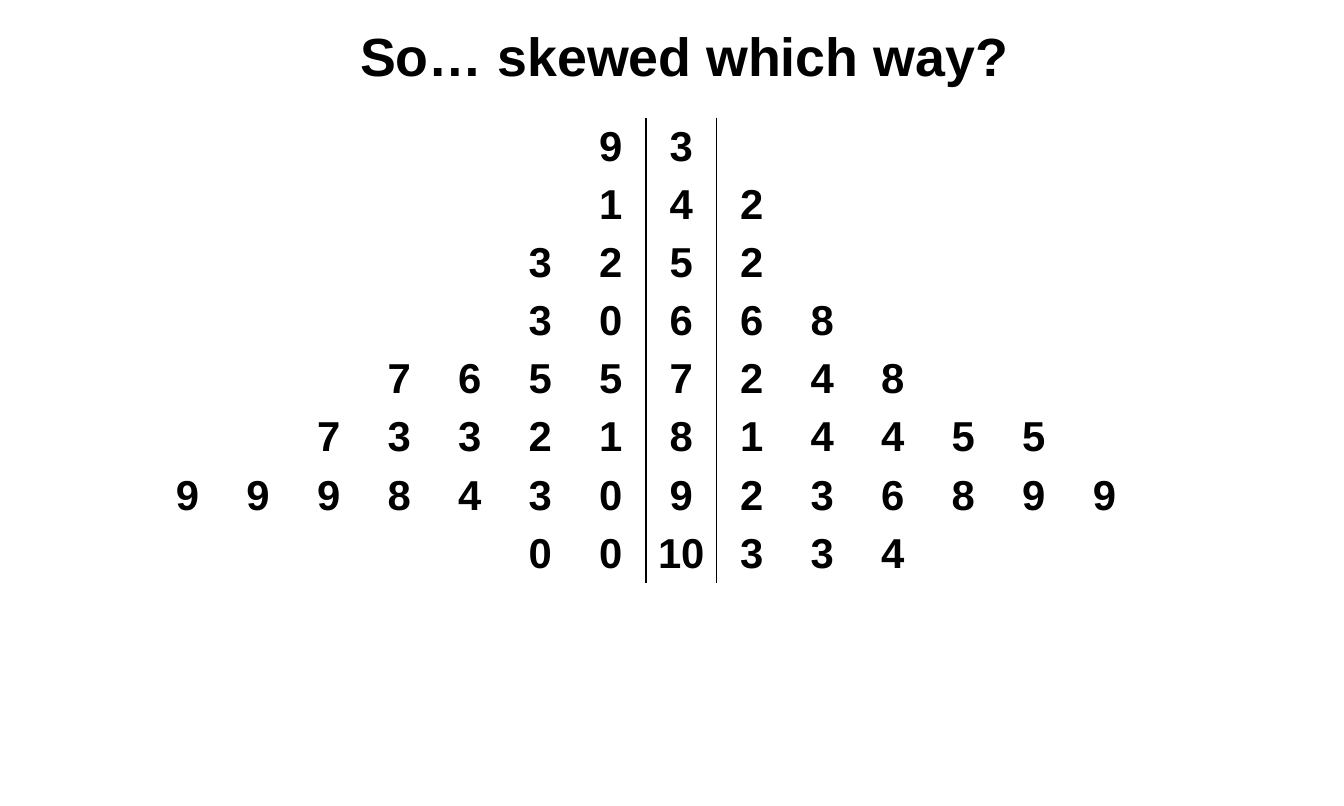
from dataclasses import dataclass

from lxml import etree
from pptx import Presentation
from pptx import util as u
from pptx.dml.color import RGBColor
from pptx.enum import text
from pptx.oxml import ns

PX = 9525
SLIDE = (1200, 720)
TITLE_BOX = (286, 15, 650, 105)
PLOT_BOX = (136, 105, 882, 416)
SIDE = 7
COLUMNS = 14
NO_STYLE = "{2D5ABB26-0587-4C30-8999-92F81FD0307C}"

LEAVES = [
    ("9", "3", ""),
    ("1", "4", "2"),
    ("32", "5", "2"),
    ("30", "6", "68"),
    ("7655", "7", "248"),
    ("73321", "8", "14455"),
    ("9998430", "9", "236899"),
    ("00", "10", "334"),
]


@dataclass(frozen=True)
class Theme:
    font: str = "Arial"
    ink: str = "000000"
    paper: str = "FFFFFF"
    title_size: int = 36
    leaf_size: int = 28
    rule_width: int = 1


THEME = Theme()


def px(length):
    return u.Emu(length * PX)


def assign(target, values):
    for name, value in values.items():
        setattr(target, name, value)


def write(frame, words, size):
    para = frame.paragraphs[0]
    para.alignment = text.PP_ALIGN.CENTER
    span = para.add_run()
    span.text = words
    assign(span.font, {"name": THEME.font, "size": u.Pt(size), "bold": True})
    span.font.color.rgb = RGBColor.from_string(THEME.ink)


def add_title(page, box, words):
    title = page.shapes.title
    assign(title, dict(zip(("left", "top", "width", "height"), map(px, box))))
    assign(title.text_frame, {
        "vertical_anchor": text.MSO_ANCHOR.TOP,
        "auto_size": text.MSO_AUTO_SIZE.NONE,
        "word_wrap": True,
        "margin_top": px(5),
    })
    write(title.text_frame, words, THEME.title_size)


def add_rules(cell, ruled_sides):
    properties = cell._tc.get_or_add_tcPr()
    for position, side in enumerate("LR"):
        line = etree.Element(ns.qn(f"a:ln{side}"), w=str(u.Pt(THEME.rule_width)))
        if side in ruled_sides:
            fill = etree.SubElement(line, ns.qn("a:solidFill"))
            etree.SubElement(fill, ns.qn("a:srgbClr"), val=THEME.ink)
        else:
            etree.SubElement(line, ns.qn("a:noFill"))
        properties.insert(position, line)


def add_stem_plot(page, box, leaves):
    left, top, width, height = box
    frame = page.shapes.add_table(len(leaves), COLUMNS, *map(px, box))
    table = frame.table
    assign(table, {"first_row": False, "horz_banding": False})
    table._tbl.tblPr.find(ns.qn("a:tableStyleId")).text = NO_STYLE
    for column in table.columns:
        column.width = px(width // COLUMNS)
    for row in table.rows:
        row.height = px(height // len(leaves))

    rules = {SIDE - 1: "R", SIDE: "LR", SIDE + 1: "L"}
    for row, (before, stem, after) in enumerate(leaves):
        values = [*before.rjust(SIDE), stem, *after.ljust(COLUMNS - SIDE - 1)]
        for column, value in enumerate(values):
            cell = table.cell(row, column)
            cell.vertical_anchor = text.MSO_ANCHOR.MIDDLE
            cell.fill.solid()
            cell.fill.fore_color.rgb = RGBColor.from_string(THEME.paper)
            add_rules(cell, rules.get(column, ""))
            if value.strip():
                write(cell.text_frame, value, THEME.leaf_size)


def main():
    deck = Presentation()
    assign(deck, dict(zip(("slide_width", "slide_height"), map(px, SLIDE))))
    page = deck.slides.add_slide(deck.slide_layouts.get_by_name("Title Only"))
    add_title(page, TITLE_BOX, "So… skewed which way?")
    add_stem_plot(page, PLOT_BOX, LEAVES)
    deck.save("out.pptx")


if __name__ == "__main__":
    main()
